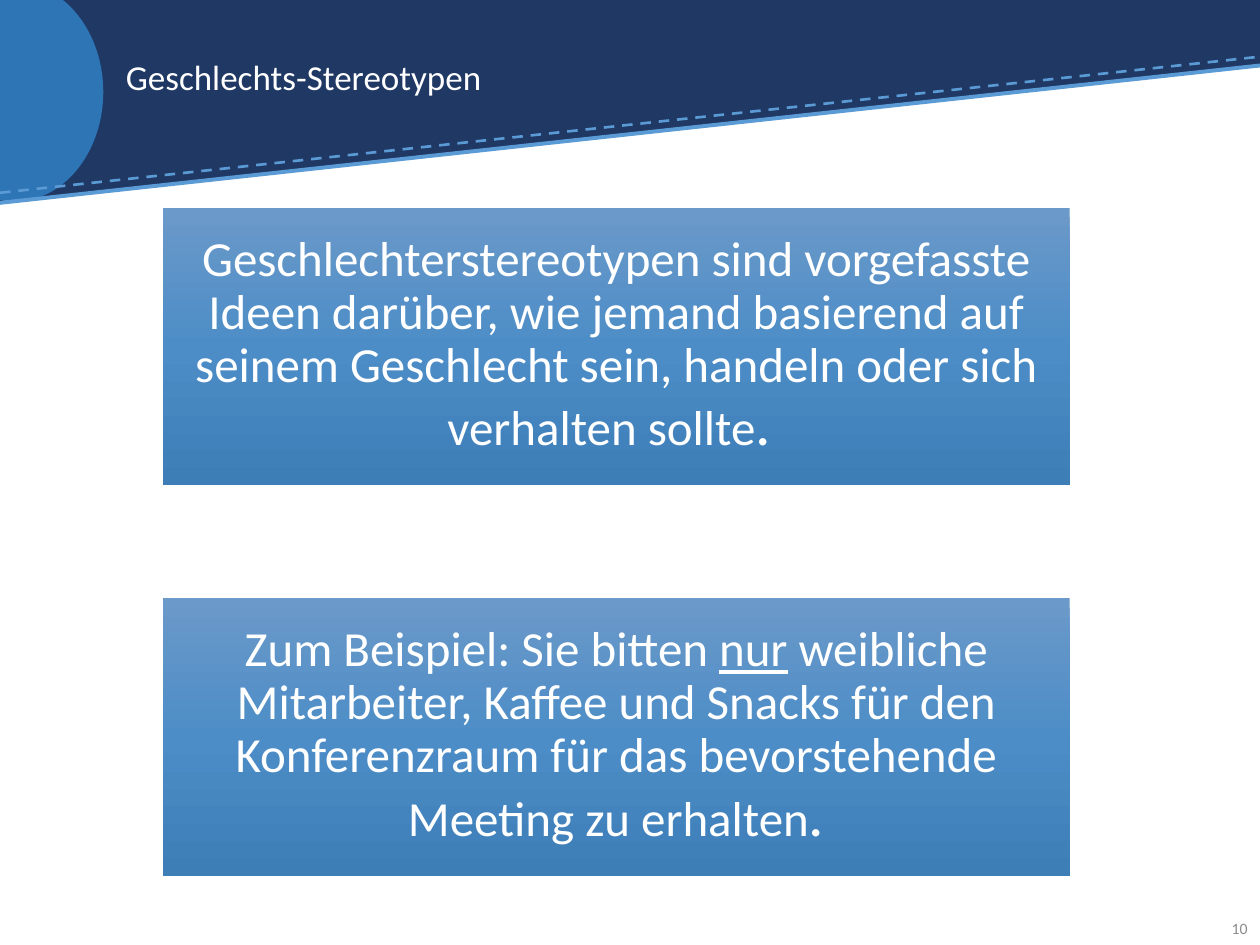
from copy import deepcopy

from pptx import Presentation
from pptx.dml.color import RGBColor
from pptx.enum.dml import MSO_LINE
from pptx.enum.shapes import MSO_CONNECTOR, MSO_SHAPE
from pptx.enum.text import MSO_ANCHOR, PP_ALIGN
from pptx.oxml.ns import qn
from pptx.util import Inches, Pt

RECT, TRIANGLE, OVAL = MSO_SHAPE.RECTANGLE, MSO_SHAPE.RIGHT_TRIANGLE, MSO_SHAPE.OVAL
STRAIGHT, DASH, MIDDLE = MSO_CONNECTOR.STRAIGHT, MSO_LINE.DASH, MSO_ANCHOR.MIDDLE
LEFT, CENTER, RIGHT = PP_ALIGN.LEFT, PP_ALIGN.CENTER, PP_ALIGN.RIGHT

NAVY = RGBColor(0x20, 0x38, 0x64)
BLUE = RGBColor(0x2E, 0x75, 0xB6)
LIGHT_BLUE = RGBColor(0x5B, 0x9B, 0xD5)
WHITE = RGBColor(0xFF, 0xFF, 0xFF)
GRAY = RGBColor(0x8C, 0x8C, 0x8C)
PANEL_STOPS = [
    (0, RGBColor(0x6B, 0x99, 0xC9)),
    (0.5, RGBColor(0x4D, 0x8D, 0xC7)),
    (1, RGBColor(0x3E, 0x7E, 0xB7)),
]
FONT = "Calibri"

PANELS = [
    [
        ("Geschlechterstereotypen sind vorgefasste Ideen darüber, wie jemand "
         "basierend auf seinem Geschlecht sein, handeln oder sich verhalten sollte", {}),
        (". ", {"size": 35}),
    ],
    [
        ("Zum Beispiel: Sie bitten ", {}),
        ("nur", {"underline": True}),
        (" weibliche Mitarbeiter, Kaffee und Snacks für den Konferenzraum "
         "für das bevorstehende Meeting zu erhalten", {}),
        (".", {"size": 35}),
    ],
]


def write_text(sp, runs, size, color=WHITE, align=LEFT, spacing=1.0, after=0, inset=None):
    """Write one paragraph of (text, format) runs into a shape."""
    tf = sp.text_frame
    tf.word_wrap = True
    tf.vertical_anchor = MIDDLE
    if inset is not None:
        tf.margin_left = tf.margin_right = tf.margin_top = tf.margin_bottom = Inches(inset)
    p = tf.paragraphs[0]
    p.alignment = align
    p.line_spacing = spacing
    p.space_after = Pt(after)
    for text, fmt in runs:
        r = p.add_run()
        r.text = text
        r.font.name = FONT
        r.font.size = Pt(fmt.get("size", size))
        r.font.color.rgb = color
        if fmt.get("underline"):
            r.font.underline = True


def add_block(s, kind, x, y, w, h, color=None):
    """Add a preset shape without outline or shadow."""
    sp = s.shapes.add_shape(kind, Inches(x), Inches(y), Inches(w), Inches(h))
    sp.shadow.inherit = False
    sp.line.fill.background()
    if color is not None:
        sp.fill.solid()
        sp.fill.fore_color.rgb = color
    return sp


def add_slope(s, x, y, w, rise, width, dash=None):
    """Add a line that climbs from left to right."""
    line = s.shapes.add_connector(
        STRAIGHT, Inches(x), Inches(y), Inches(x + w), Inches(y - rise))
    line.line.color.rgb = LIGHT_BLUE
    line.line.width = Pt(width)
    if dash is not None:
        line.line.dash_style = dash
    spPr = line._element.spPr
    spPr.append(spPr.makeelement(qn("a:effectLst"), {}))


def add_text(s, x, y, w, h, text, **fmt):
    """Add a text box with one run."""
    sp = s.shapes.add_textbox(Inches(x), Inches(y), Inches(w), Inches(h))
    write_text(sp, [(text, {})], **fmt)


def add_header(s, x, y, w, h, title):
    """Draw the slanted header band and its title."""
    edge = y + 0.52
    add_block(s, RECT, x, y, w, edge - y, NAVY)
    wedge = add_block(s, TRIANGLE, x, edge - 0.01, w, y + h - edge + 0.01, NAVY)
    wedge._element.spPr.xfrm.set("flipV", "1")
    add_block(s, OVAL, x - 0.59, y - 0.14, 1.41, h + 0.14, BLUE)
    add_slope(s, x, y + h - 0.07, w, 1.08, 1.5, DASH)
    add_slope(s, x, y + h + 0.01, w, 1.09, 2.25)
    add_text(s, x + 0.9, y + 0.2, 8.05, 0.86, title, size=20, spacing=0.9)


def add_panel(s, x, y, w, h, runs):
    """Draw a gradient panel with centred text."""
    sp = add_block(s, RECT, x, y, w, h)
    sp.fill.gradient()
    sp.fill.gradient_angle = 270
    stops = sp._element.spPr.find(".//" + qn("a:gsLst"))
    stops.append(deepcopy(stops[0]))
    for stop, (position, color) in zip(sp.fill.gradient_stops, PANEL_STOPS):
        stop.position = position
        stop.color.rgb = color
    write_text(sp, runs, size=28, align=CENTER, spacing=0.9, after=10, inset=0.02)


def main():
    """Build and save the slide."""
    prs = Presentation()
    prs.slide_width, prs.slide_height = Inches(10), Inches(7.5)
    s = prs.slides.add_slide(prs.slide_layouts[6])
    add_header(s, 0, 0, 10, 1.6, "Geschlechts-Stereotypen")
    add_text(s, 9.47, 7.17, 0.53, 0.4, "10", size=9, color=GRAY, align=RIGHT, after=6)
    for i, runs in enumerate(PANELS):
        add_panel(s, 1.29, 1.65 + i * 3.1, 7.2, 2.2, runs)
    prs.save("out.pptx")


if __name__ == "__main__":
    main()
